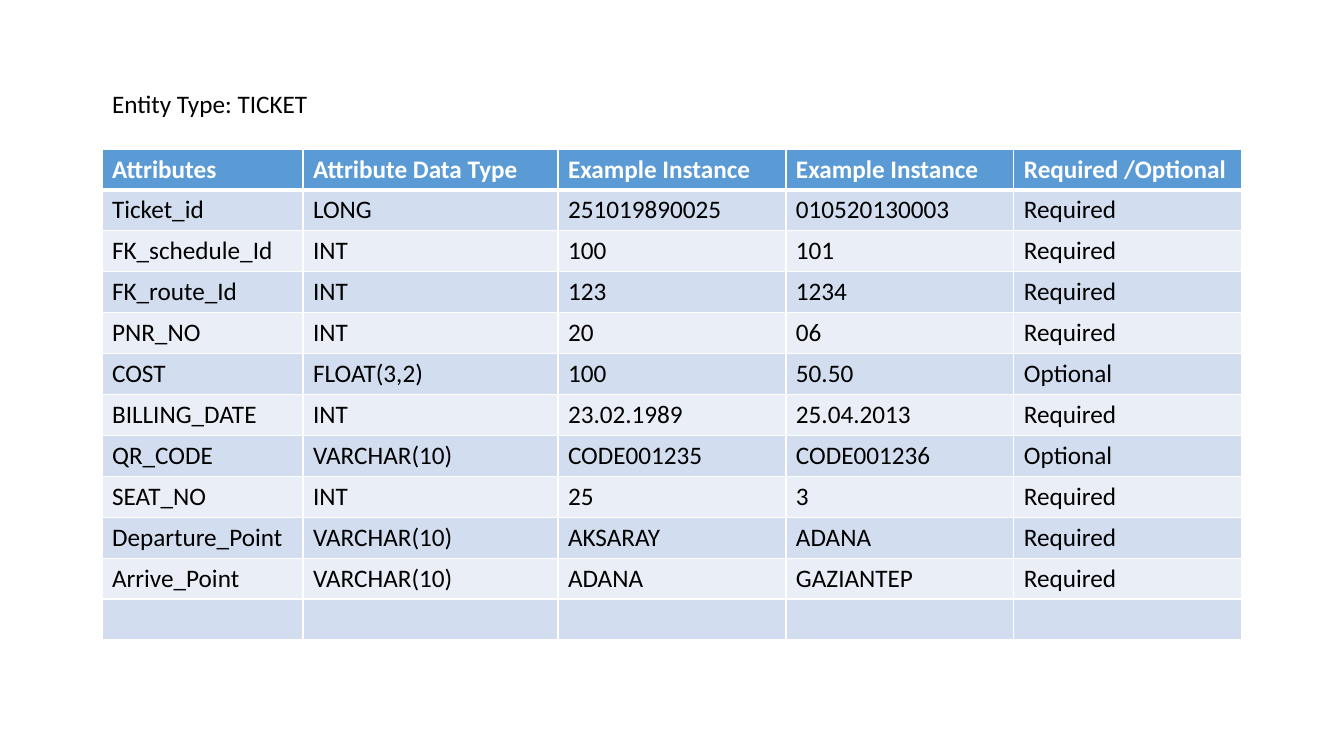
from dataclasses import dataclass

from lxml.etree import SubElement
from pptx import Presentation
from pptx.dml.color import RGBColor as RGB
from pptx.enum.text import MSO_ANCHOR as ANCHOR, MSO_AUTO_SIZE as AUTO, PP_ALIGN as ALIGN
from pptx.oxml.ns import qn
from pptx.util import Emu, Pt

TITLE = "Entity Type: TICKET"
ROWS = [
    ("Attributes", "Attribute Data Type", "Example Instance", "Example Instance", "Required /Optional"),
    ("Ticket_id", "LONG", "251019890025", "010520130003", "Required"),
    ("FK_schedule_Id", "INT", "100", "101", "Required"),
    ("FK_route_Id", "INT", "123", "1234", "Required"),
    ("PNR_NO", "INT", "20", "06", "Required"),
    ("COST", "FLOAT(3,2)", "100", "50.50", "Optional"),
    ("BILLING_DATE", "INT", "23.02.1989", "25.04.2013", "Required"),
    ("QR_CODE", "VARCHAR(10)", "CODE001235", "CODE001236", "Optional"),
    ("SEAT_NO", "INT", "25", "3", "Required"),
    ("Departure_Point", "VARCHAR(10)", "AKSARAY", "ADANA", "Required"),
    ("Arrive_Point", "VARCHAR(10)", "ADANA", "GAZIANTEP", "Required"),
    ("", "", "", "", ""),
]
COL_WIDTHS = (201, 255, 228, 228, 228)
LEFT, TABLE_TOP, TABLE_HEIGHT = 102, 149, 491
TITLE_BOX = (LEFT, 83, 218, 40)
SLIDE_SIZE = (1344, 756)


@dataclass(frozen=True)
class Theme:
    font: str = "Calibri"
    size: int = 18
    text: str = "000000"
    header_text: str = "FFFFFF"
    header_fill: str = "5B9BD5"
    bands: tuple = ("D2DEEF", "EAEFF7")
    border: str = "FFFFFF"
    thin: int = 1
    thick: int = 3


THEME = Theme()


def px(n):
    return Emu(round(n * 914400 / 100.8))


def write(tf, text, color, bold=False):
    tf.text = text
    p = tf.paragraphs[0]
    p.alignment = ALIGN.LEFT
    for r in p.runs:
        r.font.name = THEME.font
        r.font.size = Pt(THEME.size)
        r.font.bold = bold
        r.font.color.rgb = RGB.from_string(color)


def add_borders(cell, top, bottom):
    tcPr = cell._tc.get_or_add_tcPr()
    widths = {"a:lnL": THEME.thin, "a:lnR": THEME.thin, "a:lnT": top, "a:lnB": bottom}
    for tag, width in widths.items():
        ln = SubElement(tcPr, qn(tag), w=str(Pt(width)))
        fill = SubElement(ln, qn("a:solidFill"))
        SubElement(fill, qn("a:srgbClr"), val=THEME.border)


def add_title(slide):
    sp = slide.shapes.title
    sp.left, sp.top, sp.width, sp.height = map(px, TITLE_BOX)
    tf = sp.text_frame
    write(tf, TITLE, THEME.text)
    tf.word_wrap = False
    tf.auto_size = AUTO.SHAPE_TO_FIT_TEXT
    tf.vertical_anchor = ANCHOR.TOP
    tf.paragraphs[0].line_spacing = 1.0


def add_attributes(slide):
    table = slide.shapes.add_table(
        len(ROWS), len(COL_WIDTHS), px(LEFT), px(TABLE_TOP), px(sum(COL_WIDTHS)), px(TABLE_HEIGHT)
    ).table
    for column, width in zip(table.columns, COL_WIDTHS):
        column.width = px(width)
    for i, values in enumerate(ROWS):
        header = i == 0
        table.rows[i].height = px(TABLE_HEIGHT / len(ROWS))
        fill = THEME.header_fill if header else THEME.bands[(i - 1) % 2]
        color = THEME.header_text if header else THEME.text
        top = THEME.thick if i == 1 else THEME.thin
        bottom = THEME.thick if header else THEME.thin
        for j, value in enumerate(values):
            cell = table.cell(i, j)
            write(cell.text_frame, value, color, header)
            add_borders(cell, top, bottom)
            cell.fill.solid()
            cell.fill.fore_color.rgb = RGB.from_string(fill)


def main():
    prs = Presentation()
    prs.slide_width, prs.slide_height = map(px, SLIDE_SIZE)
    slide = prs.slides.add_slide(prs.slide_layouts[5])
    add_title(slide)
    add_attributes(slide)
    prs.save("out.pptx")


if __name__ == "__main__":
    main()
